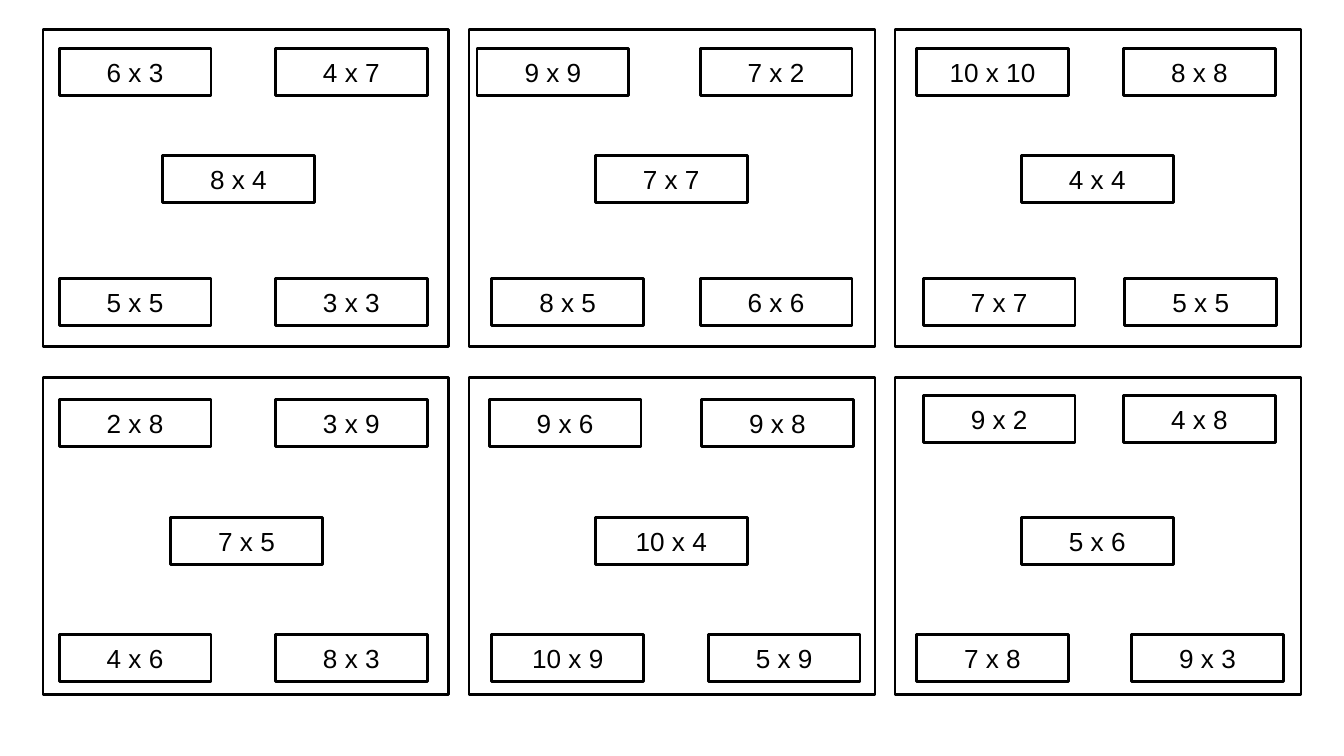
from pptx import Presentation
from pptx.dml.color import RGBColor as Rgb
from pptx.enum.shapes import MSO_SHAPE as Kind
from pptx.enum.text import MSO_ANCHOR as Anchor, PP_ALIGN as Align
from pptx.util import Inches, Pt

deck = Presentation()
deck.slide_width = Inches(10)
deck.slide_height = deck.slide_width * 9 // 16
slide = deck.slides.add_slide(deck.slide_layouts[6])
unit = deck.slide_width // 1000


def paint(color):
    return Rgb.from_string(color)


def box(x, y, wide, high):
    shape = slide.shapes.add_shape(
        Kind.RECTANGLE, x * unit, y * unit, wide * unit, high * unit
    )
    shape.shadow.inherit = False
    shape.fill.solid()
    shape.fill.fore_color.rgb = paint("FFFFFF")
    shape.line.color.rgb = paint("000000")
    shape.line.width = Pt(1.5)
    return shape


cards = [
    [
        ("6 x 3", "4 x 7", "8 x 4", "5 x 5", "3 x 3"),
        ("9 x 9", "7 x 2", "7 x 7", "8 x 5", "6 x 6"),
        ("10 x 10", "8 x 8", "4 x 4", "7 x 7", "5 x 5"),
    ],
    [
        ("2 x 8", "3 x 9", "7 x 5", "4 x 6", "8 x 3"),
        ("9 x 6", "9 x 8", "10 x 4", "10 x 9", "5 x 9"),
        ("9 x 2", "4 x 8", "5 x 6", "7 x 8", "9 x 3"),
    ],
]
lefts = [
    [(12, 173, 89, 12, 173), (6, 172, 94, 17, 172), (16, 170, 94, 21, 171)],
    [(12, 173, 95, 12, 173), (15, 173, 94, 17, 178), (21, 170, 94, 16, 176)],
]
tops = [
    [(14, 14, 94, 185, 185)] * 3,
    [(16, 16, 104, 191, 191)] * 2 + [(13, 13, 104, 191, 191)],
]

for r, band in enumerate(cards):
    for c, card in enumerate(band):
        x, y = 32 + 317 * c, 22 + 259 * r
        box(x, y, 302, 236)
        for label, left, top in zip(card, lefts[r][c], tops[r][c]):
            frame = box(x + left, y + top, 113, 35).text_frame
            frame.margin_left = frame.margin_right = Inches(0.1)
            frame.margin_top = frame.margin_bottom = Inches(0.1)
            frame.vertical_anchor = Anchor.MIDDLE
            line = frame.paragraphs[0]
            line.text = label
            line.alignment = Align.CENTER
            line.font.name = "Arial"
            line.font.size = Pt(14)
            line.font.color.rgb = paint("000000")

deck.save("out.pptx")
